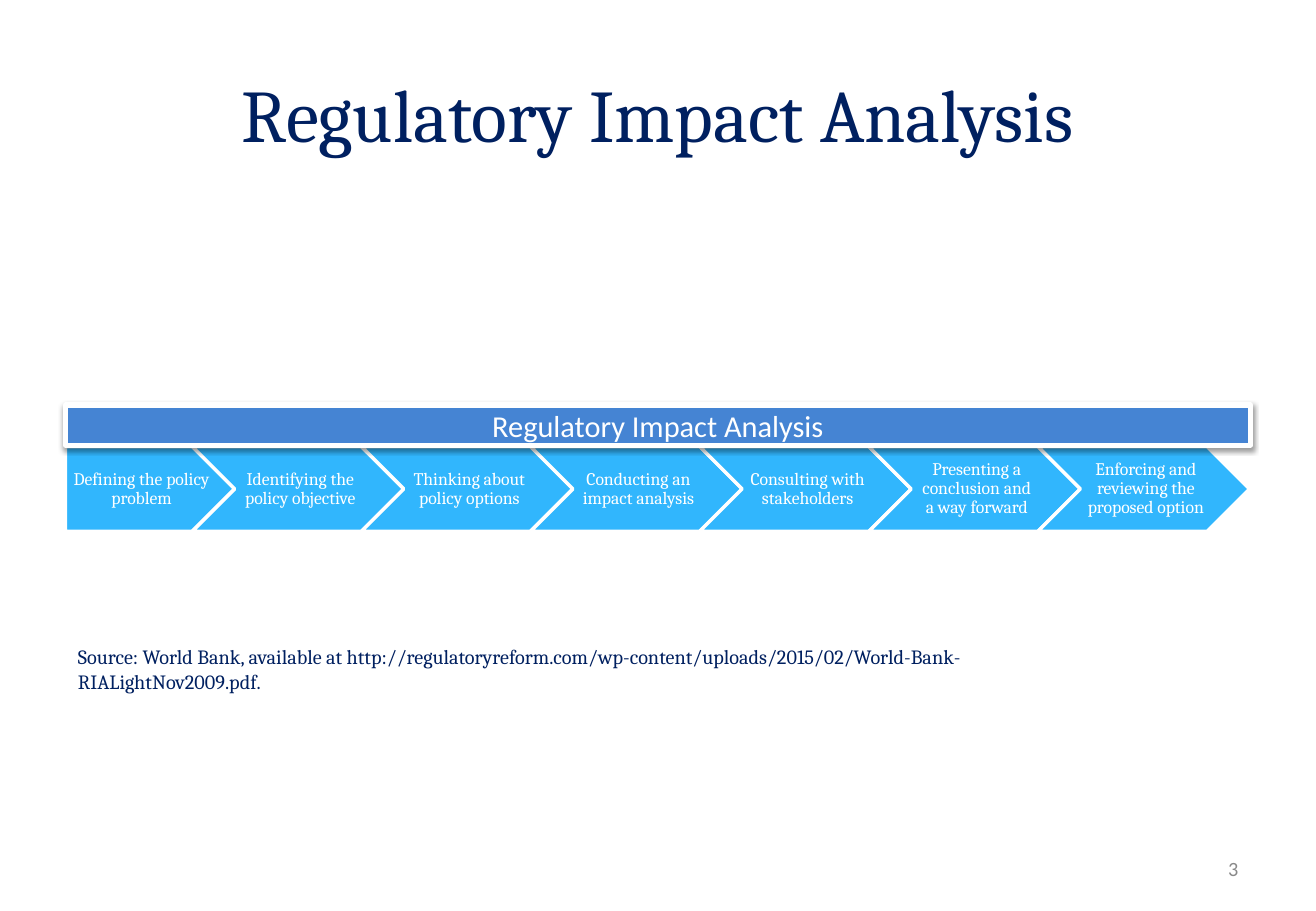
from lxml import etree
from pptx import Presentation
from pptx.dml.color import RGBColor
from pptx.enum.shapes import MSO_SHAPE
from pptx.enum.text import MSO_ANCHOR, PP_ALIGN
from pptx.oxml import parse_xml
from pptx.oxml.ns import nsdecls
from pptx.util import Cm, Pt

NAVY = RGBColor(0x00, 0x20, 0x60)
SKY = RGBColor(0x31, 0xB6, 0xFD)
BLUE = RGBColor(0x45, 0x84, 0xD3)
GREY = RGBColor(0x89, 0x89, 0x89)
WHITE = RGBColor(0xFF, 0xFF, 0xFF)
LEFT, CENTER, RIGHT = PP_ALIGN.LEFT, PP_ALIGN.CENTER, PP_ALIGN.RIGHT
TOP, MIDDLE = MSO_ANCHOR.TOP, MSO_ANCHOR.MIDDLE
RECTANGLE, PENTAGON, CHEVRON = MSO_SHAPE.RECTANGLE, MSO_SHAPE.PENTAGON, MSO_SHAPE.CHEVRON
DEFAULT_INSETS = (0.25, 0.13, 0.25, 0.13)
HEADING = "Regulatory Impact Analysis"
STEPS = [
    "Defining the policy problem",
    "Identifying the policy objective",
    "Thinking about policy options",
    "Conducting an impact analysis",
    "Consulting with stakeholders",
    "Presenting a conclusion and a way forward",
    "Enforcing and reviewing the proposed option",
]
SOURCE = ("Source: World Bank, available at http://regulatoryreform.com/wp-content/"
          "uploads/2015/02/World-Bank-RIALightNov2009.pdf.")


def write(shape, text, size, color, font="Cambria", align=CENTER, anchor=MIDDLE,
          insets=DEFAULT_INSETS, spacing=None):
    """Write one formatted paragraph into a shape."""
    frame = shape.text_frame
    frame.word_wrap = True
    frame.vertical_anchor = anchor
    (frame.margin_left, frame.margin_top,
     frame.margin_right, frame.margin_bottom) = map(Cm, insets)
    para = frame.paragraphs[0]
    para.alignment = align
    para.line_spacing = spacing
    span = para.add_run()
    span.text = text
    span.font.size = Pt(size)
    span.font.name = font
    span.font.color.rgb = color


def add_filled(page, kind, box, fill, line_width):
    """Add a filled shape with a white outline and no shadow."""
    shape = page.shapes.add_shape(kind, *map(Cm, box))
    shape.shadow.inherit = False
    shape.fill.solid()
    shape.fill.fore_color.rgb = fill
    shape.line.color.rgb = WHITE
    shape.line.width = Pt(line_width)
    return shape


def add_title(page, box):
    """Place and write the title placeholder."""
    title = page.shapes.title
    title.left, title.top, title.width, title.height = map(Cm, box)
    write(title, HEADING, 44, NAVY)


def add_steps(page, box):
    """Lay out the process as a pentagon followed by nested chevrons."""
    left, top, width, height = box
    step = width / len(STEPS)
    for index, text in enumerate(STEPS):
        kind, notch = (CHEVRON, height / 2) if index else (PENTAGON, 0)
        arrow = add_filled(page, kind, (left + index * step - notch, top, step + notch, height),
                           SKY, 2)
        write(arrow, text, 10.5, WHITE, spacing=0.9, insets=(0.13, 0.07, 0.04, 0.07))


def add_banner(page, box):
    """Add the banner with a soft shadow beneath it."""
    banner = add_filled(page, RECTANGLE, box, BLUE, 3)
    effects = banner.element.spPr.find("{*}effectLst")
    shadow = parse_xml(f'<a:outerShdw {nsdecls("a")} blurRad="40000" dist="20000" '
                       'dir="5400000" rotWithShape="0"/>')
    color = etree.SubElement(shadow, shadow.tag.replace("outerShdw", "srgbClr"), val="000000")
    etree.SubElement(color, shadow.tag.replace("outerShdw", "alpha"), val="38000")
    effects.append(shadow)
    write(banner, HEADING, 18, WHITE, font="Calibri")


def add_note(page, box, text, color, **text_format):
    """Add a small line of text in its own box."""
    note = page.shapes.add_textbox(*map(Cm, box))
    write(note, text, 12, color, **text_format)


def main():
    """Build the deck and save it."""
    deck = Presentation()
    deck.slide_width, deck.slide_height = Cm(27.51), Cm(19.05)
    page = deck.slides.add_slide(deck.slide_layouts[5])
    add_title(page, (1.37, 0.76, 24.77, 3.18))
    add_steps(page, (1.37, 9.34, 24.75, 1.77))
    add_note(page, (19.71, 17.65, 6.43, 1.02), "3", GREY, font="Calibri", align=RIGHT)
    add_banner(page, (1.37, 8.47, 24.77, 0.84))
    add_note(page, (1.38, 13.35, 20.75, 1.27), SOURCE, NAVY, align=LEFT, anchor=TOP)
    deck.save("out.pptx")


if __name__ == "__main__":
    main()
